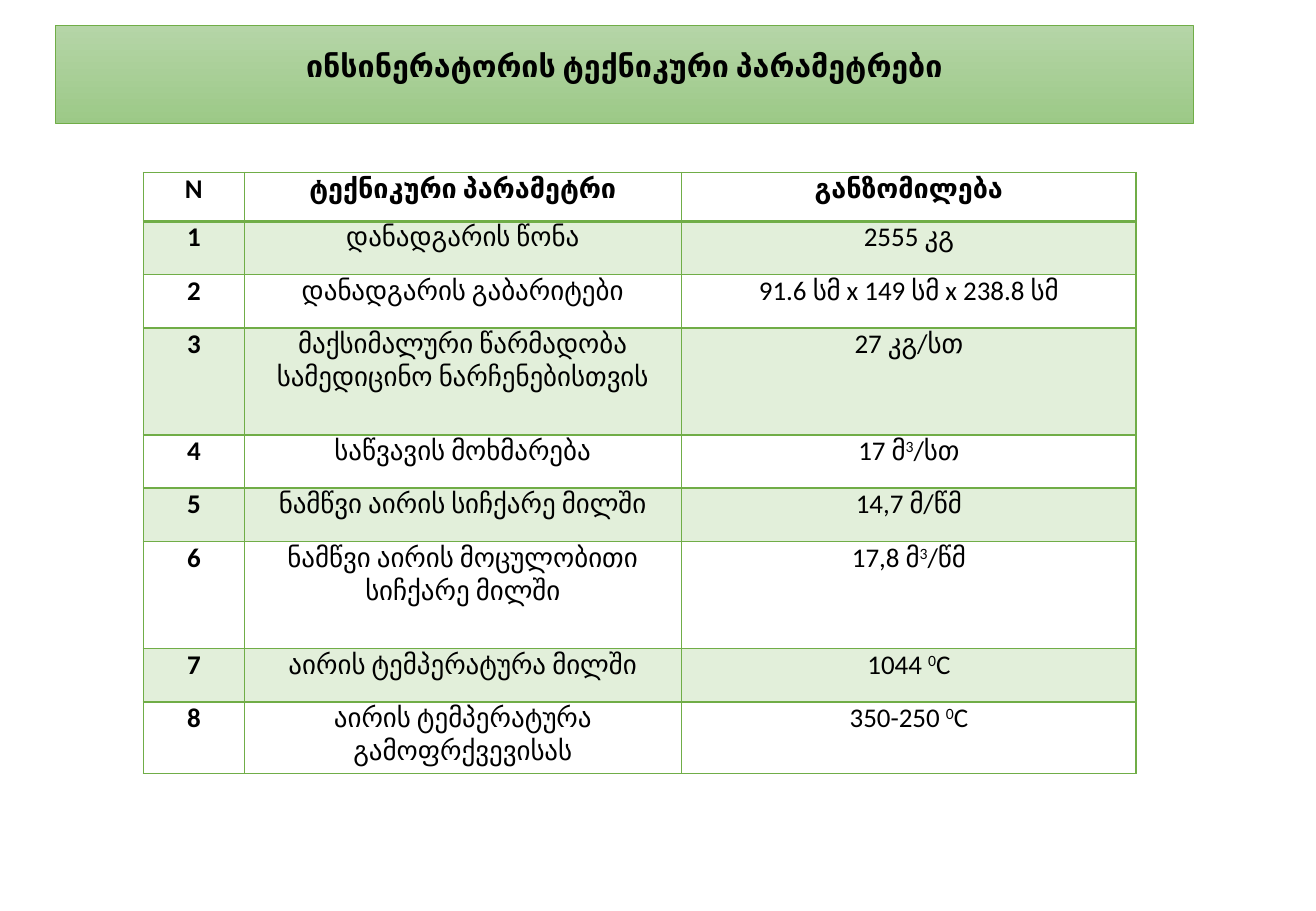
from lxml import etree
from pptx import Presentation, util as u
from pptx.dml.color import RGBColor
from pptx.enum import text
from pptx.oxml import ns

GREEN = RGBColor(0x70, 0xAD, 0x47)
PALE_GREEN = RGBColor(0xE2, 0xEF, 0xDA)
TITLE_TOP = RGBColor(0xB5, 0xD5, 0xA7)
TITLE_BOTTOM = RGBColor(0x9C, 0xC9, 0x87)
BLACK = RGBColor(0, 0, 0)

COLUMN_WIDTHS = [0.83, 3.6, 3.74]
ROW_HEIGHTS = [0.4, 0.44, 0.44, 0.88, 0.44, 0.44, 0.88, 0.44, 0.59]
# A value is split at ^ into base, superscript and base text
PARAMETERS = [
    ("N", "ტექნიკური პარამეტრი", "განზომილება"),
    ("1", "დანადგარის წონა", "2555 კგ"),
    ("2", "დანადგარის გაბარიტები", "91.6 სმ x 149 სმ x 238.8 სმ"),
    ("3", "მაქსიმალური წარმადობა სამედიცინო ნარჩენებისთვის", "27 კგ/სთ"),
    ("4", "საწვავის მოხმარება", "17 მ^3^/სთ"),
    ("5", "ნამწვი აირის სიჩქარე მილში", "14,7 მ/წმ"),
    ("6", "ნამწვი აირის მოცულობითი სიჩქარე მილში", "17,8 მ^3^/წმ"),
    ("7", "აირის ტემპერატურა მილში", "1044 ^0^C"),
    ("8", "აირის ტემპერატურა გამოფრქვევისას", "350-250 ^0^C"),
]


def write_text(frame, content, size=16, bold=False, space_before=0):
    paragraph = frame.paragraphs[0]
    paragraph.alignment = text.PP_ALIGN.CENTER
    paragraph.space_before = u.Pt(space_before)
    for index, part in enumerate(content.split("^")):
        run = paragraph.add_run()
        run.text = part
        run.font.name = "Calibri"
        run.font.size = u.Pt(size)
        run.font.bold = bold
        run.font.color.rgb = BLACK
        if index % 2:
            run.font._element.set("baseline", "30000")


def add_border(cell, side, points):
    properties = cell._tc.get_or_add_tcPr()
    line = etree.SubElement(properties, ns.qn(f"a:ln{side}"), w=str(u.Pt(points)))
    fill = etree.SubElement(line, ns.qn("a:solidFill"))
    etree.SubElement(fill, ns.qn("a:srgbClr"), val=str(GREEN))


presentation = Presentation()
presentation.slide_width = u.Inches(10.83)
presentation.slide_height = u.Inches(7.5)
slide = presentation.slides.add_slide(presentation.slide_layouts[5])

# Title banner
title = slide.shapes.title
title.left, title.top = u.Inches(0.46), u.Inches(0.21)
title.width, title.height = u.Inches(9.36), u.Inches(0.81)
title.fill.gradient()
title.fill.gradient_angle = 270
for stop, color in zip(title.fill.gradient_stops, (TITLE_TOP, TITLE_BOTTOM)):
    stop.color.rgb = color
title.line.color.rgb = GREEN
title.line.width = u.Pt(0.5)
title.text_frame.auto_size = text.MSO_AUTO_SIZE.NONE
title.text_frame.vertical_anchor = text.MSO_ANCHOR.BOTTOM
title.text_frame.margin_bottom = u.Inches(0.33)
write_text(title.text_frame, "ინსინერატორის ტექნიკური პარამეტრები", size=18, bold=True)

# Parameter table
table = slide.shapes.add_table(
    len(ROW_HEIGHTS), len(COLUMN_WIDTHS), u.Inches(1.18), u.Inches(1.42),
    u.Inches(sum(COLUMN_WIDTHS)), u.Inches(sum(ROW_HEIGHTS))).table
table.horz_banding = False
for column, width in zip(table.columns, COLUMN_WIDTHS):
    column.width = u.Inches(width)
for row, height in zip(table.rows, ROW_HEIGHTS):
    row.height = u.Inches(height)

for row_index, values in enumerate(PARAMETERS):
    for column_index, value in enumerate(values):
        cell = table.cell(row_index, column_index)
        cell.margin_left = cell.margin_right = u.Inches(0.07)
        cell.margin_top = cell.margin_bottom = 0
        is_heading = row_index == 0 or column_index == 0
        write_text(cell.text_frame, value, bold=is_heading, space_before=6)
        # The rule between header and body is twice as thick
        for side in "LRTB":
            under_header = (row_index, side) in ((0, "B"), (1, "T"))
            add_border(cell, side, 2 if under_header else 1)
        if row_index % 2:
            cell.fill.solid()
            cell.fill.fore_color.rgb = PALE_GREEN
        else:
            cell.fill.background()

presentation.save("out.pptx")
